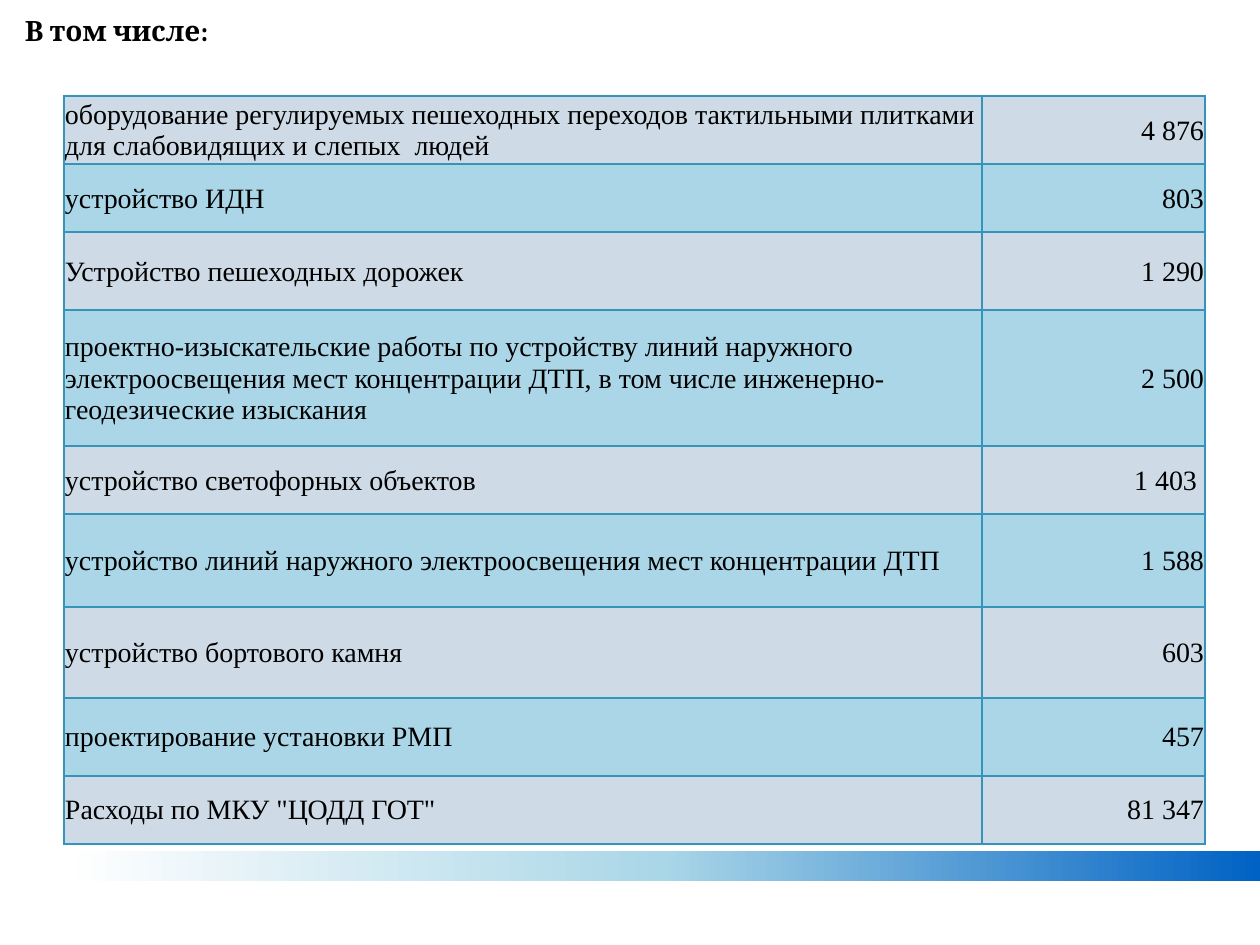
from pptx import Presentation, util as u
from pptx.dml.color import RGBColor
from pptx.enum import shapes, text
from pptx.oxml import parse_xml
from pptx.oxml.ns import nsdecls

PX = 914400 // 126
TITLE = "В том числе:"
ROWS = [
    ("оборудование регулируемых пешеходных переходов тактильными плитками для слабовидящих и слепых  людей", "4 876", 55),
    ("устройство ИДН", "803", 68),
    ("Устройство пешеходных дорожек", "1 290", 78),
    ("проектно-изыскательские работы по устройству линий наружного электроосвещения мест концентрации ДТП, "
     "в том числе инженерно-геодезические изыскания", "2 500", 136),
    ("устройство светофорных объектов", "1 403 ", 68),
    ("устройство линий наружного электроосвещения мест концентрации ДТП", "1 588", 93),
    ("устройство бортового камня", "603", 91),
    ("проектирование установки РМП", "457", 78),
    ('Расходы по МКУ "ЦОДД ГОТ"', "81 347", 68),
]
COLUMNS = [(918, text.PP_ALIGN.LEFT), (223, text.PP_ALIGN.RIGHT)]
BANDS = ["CEDBE6", "AAD6E7"]
BORDER = "3494BA"
STOPS = [(0, "0062C4"), (50, "AAD6E7"), (100, "FFFFFF")]
CELL = dict(margin_left=PX, margin_right=PX, margin_top=PX, margin_bottom=0,
            vertical_anchor=text.MSO_ANCHOR.MIDDLE)
HEADING = dict(margin_left=25 * PX, word_wrap=True, vertical_anchor=text.MSO_ANCHOR.MIDDLE)


def box(*sizes):
    return [n * PX for n in sizes]


def rgb(value):
    return RGBColor.from_string(value)


def apply(target, values):
    for name, value in values.items():
        setattr(target, name, value)


def write(tf, words, font, **paragraph):
    p = tf.paragraphs[0]
    apply(p, paragraph)
    r = p.add_run()
    r.text = words
    apply(r.font, dict(size=u.Pt(16), **font))
    r.font.color.rgb = rgb("000000")


def outline(cell):
    tcPr = cell._tc.get_or_add_tcPr()
    for i, side in enumerate(("lnL", "lnR", "lnT", "lnB")):
        tcPr.insert(i, parse_xml(
            f'<a:{side} {nsdecls("a")} w="12700"><a:solidFill>'
            f'<a:srgbClr val="{BORDER}"/></a:solidFill></a:{side}>'))


def add_title(s):
    tf = s.shapes.add_textbox(*box(0, 0, 1260, 65)).text_frame
    apply(tf, HEADING)
    write(tf, TITLE, dict(name="Cambria", bold=True), line_spacing=0.9)


def add_costs(s):
    width, height = sum(c[0] for c in COLUMNS), sum(r[2] for r in ROWS)
    table = s.shapes.add_table(len(ROWS), len(COLUMNS), *box(64, 96, width, height)).table
    table.first_row = False
    for column, (size, _) in zip(table.columns, COLUMNS):
        column.width = size * PX
    for i, (*words, size) in enumerate(ROWS):
        table.rows[i].height = size * PX
        for j, (_, align) in enumerate(COLUMNS):
            cell = table.cell(i, j)
            apply(cell, CELL)
            cell.fill.solid()
            cell.fill.fore_color.rgb = rgb(BANDS[i % 2])
            outline(cell)
            write(cell.text_frame, words[j], dict(name="Times New Roman"), alignment=align)


def add_stripe(s):
    sp = s.shapes.add_shape(shapes.MSO_SHAPE.RECTANGLE, *box(64, 851, 1196, 30))
    sp.shadow.inherit = False
    sp.line.fill.background()
    stops = "".join(f'<a:gs pos="{at * 1000}"><a:srgbClr val="{c}"/></a:gs>' for at, c in STOPS)
    sp._element.spPr.insert(2, parse_xml(
        f'<a:gradFill {nsdecls("a")}><a:gsLst>{stops}</a:gsLst><a:lin ang="10800000"/></a:gradFill>'))


def main():
    """Build the slide that lists the road safety costs."""
    prs = Presentation()
    prs.slide_width, prs.slide_height = box(1260, 945)
    s = prs.slides.add_slide(prs.slide_layouts[6])
    add_title(s)
    add_costs(s)
    add_stripe(s)
    prs.save("out.pptx")


if __name__ == "__main__":
    main()
